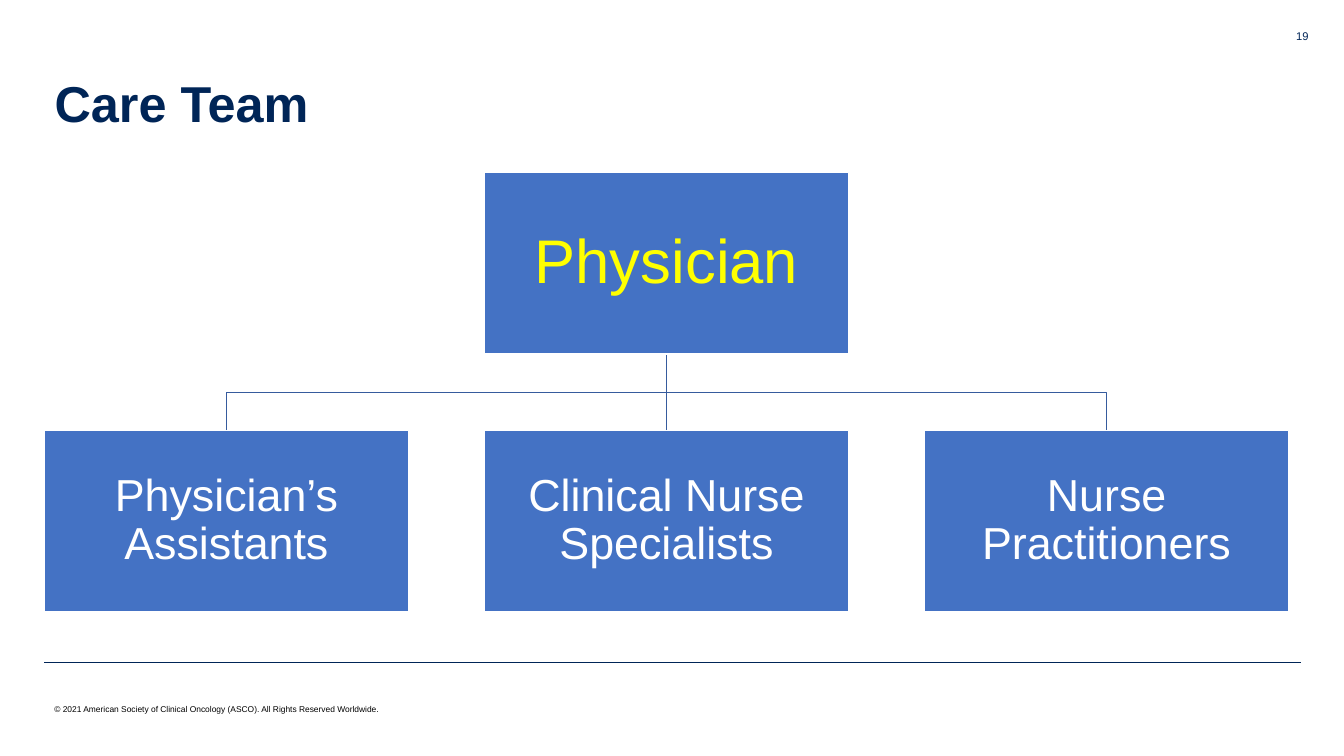
from lxml import etree
from pptx import Presentation
from pptx.dml.color import RGBColor
from pptx.enum.shapes import MSO_CONNECTOR, MSO_SHAPE
from pptx.enum.text import MSO_ANCHOR, PP_ALIGN
from pptx.oxml.ns import qn
from pptx.util import Cm, Pt

STRAIGHT = MSO_CONNECTOR.STRAIGHT
RECTANGLE = MSO_SHAPE.RECTANGLE
TOP, MIDDLE = MSO_ANCHOR.TOP, MSO_ANCHOR.MIDDLE
LEFT, CENTER, RIGHT = PP_ALIGN.LEFT, PP_ALIGN.CENTER, PP_ALIGN.RIGHT

COLORS = {
    "navy": "002557",
    "box": "4472C4",
    "branch": "365B9D",
    "white": "FFFFFF",
    "yellow": "FFFF00",
    "black": "000000",
}


def write(shape, text, size, color, align, anchor=MIDDLE, bold=False, spacing=1.0):
    frame = shape.text_frame
    frame.text = text
    frame.word_wrap = True
    frame.vertical_anchor = anchor
    paragraph = frame.paragraphs[0]
    paragraph.alignment = align
    paragraph.line_spacing = spacing
    font = paragraph.runs[0].font
    formats = {"name": "Arial", "size": Pt(size), "bold": bold}
    for attribute, value in formats.items():
        setattr(font, attribute, value)
    font.color.rgb = RGBColor.from_string(COLORS[color])


def add_line(start, end, color, width):
    line = slide.shapes.add_connector(STRAIGHT, *start, *end)
    line.line.color.rgb = RGBColor.from_string(COLORS[color])
    line.line.width = Pt(width)
    etree.SubElement(line._element.spPr, qn("a:effectLst"))
    return line


deck = Presentation()
deck.slide_width, deck.slide_height = Cm(33.87), Cm(19.05)
slide = deck.slides.add_slide(deck.slide_layouts[5])

add_line((Cm(1.12), Cm(16.69)), (Cm(32.79), Cm(16.69)), "navy", 0.25)

title = slide.shapes.title
title.left, title.top, title.width, title.height = Cm(1.12), Cm(0.84), Cm(29.21), Cm(3.68)
write(title, "Care Team", 36, "navy", LEFT, bold=True, spacing=0.9)

copyright_line = slide.shapes.add_textbox(Cm(1.12), Cm(17.37), Cm(11.43), Cm(1.02))
write(
    copyright_line,
    "© 2021 American Society of Clinical Oncology (ASCO). All Rights Reserved Worldwide.",
    6, "black", LEFT,
)
page_number = slide.shapes.add_textbox(Cm(30.84), Cm(0.61), Cm(2.39), Cm(1.02))
write(page_number, "19", 8, "navy", RIGHT, anchor=TOP)

box_width, box_height = Cm(9.18), Cm(4.57)
lead_top, team_top = Cm(4.35), Cm(10.85)
lead_bottom = lead_top + box_height
columns = [Cm(1.12) + i * Cm(11.09) for i in range(3)]
centers = [left + box_width // 2 for left in columns]
fork = (lead_bottom + team_top) // 2

for center in (centers[2], centers[0]):
    outline = slide.shapes.build_freeform(centers[1], lead_bottom)
    outline.add_line_segments(
        [(centers[1], fork), (center, fork), (center, team_top)], close=False
    )
    branch = outline.convert_to_shape()
    branch.shadow.inherit = False
    branch.fill.background()
    branch.line.color.rgb = RGBColor.from_string(COLORS["branch"])
    branch.line.width = Pt(1)

trunk = add_line((centers[1], lead_bottom), (centers[1], team_top), "branch", 1)

members = [
    ("Physician", columns[1], lead_top, 44, "yellow"),
    ("Physician’s Assistants", columns[0], team_top, 32, "white"),
    ("Clinical Nurse Specialists", columns[1], team_top, 32, "white"),
    ("Nurse Practitioners", columns[2], team_top, 32, "white"),
]
boxes = {}
for role, left, top, size, color in members:
    box = slide.shapes.add_shape(RECTANGLE, left, top, box_width, box_height)
    box.shadow.inherit = False
    box.fill.solid()
    box.fill.fore_color.rgb = RGBColor.from_string(COLORS["box"])
    box.line.color.rgb = RGBColor.from_string(COLORS["white"])
    box.line.width = Pt(1)
    for side in ("left", "top", "right", "bottom"):
        setattr(box.text_frame, f"margin_{side}", Cm(0.06))
    write(box, role, size, color, CENTER, spacing=0.9)
    boxes[role] = box

trunk.begin_connect(boxes["Physician"], 2)
trunk.end_connect(boxes["Clinical Nurse Specialists"], 0)

deck.save("out.pptx")
